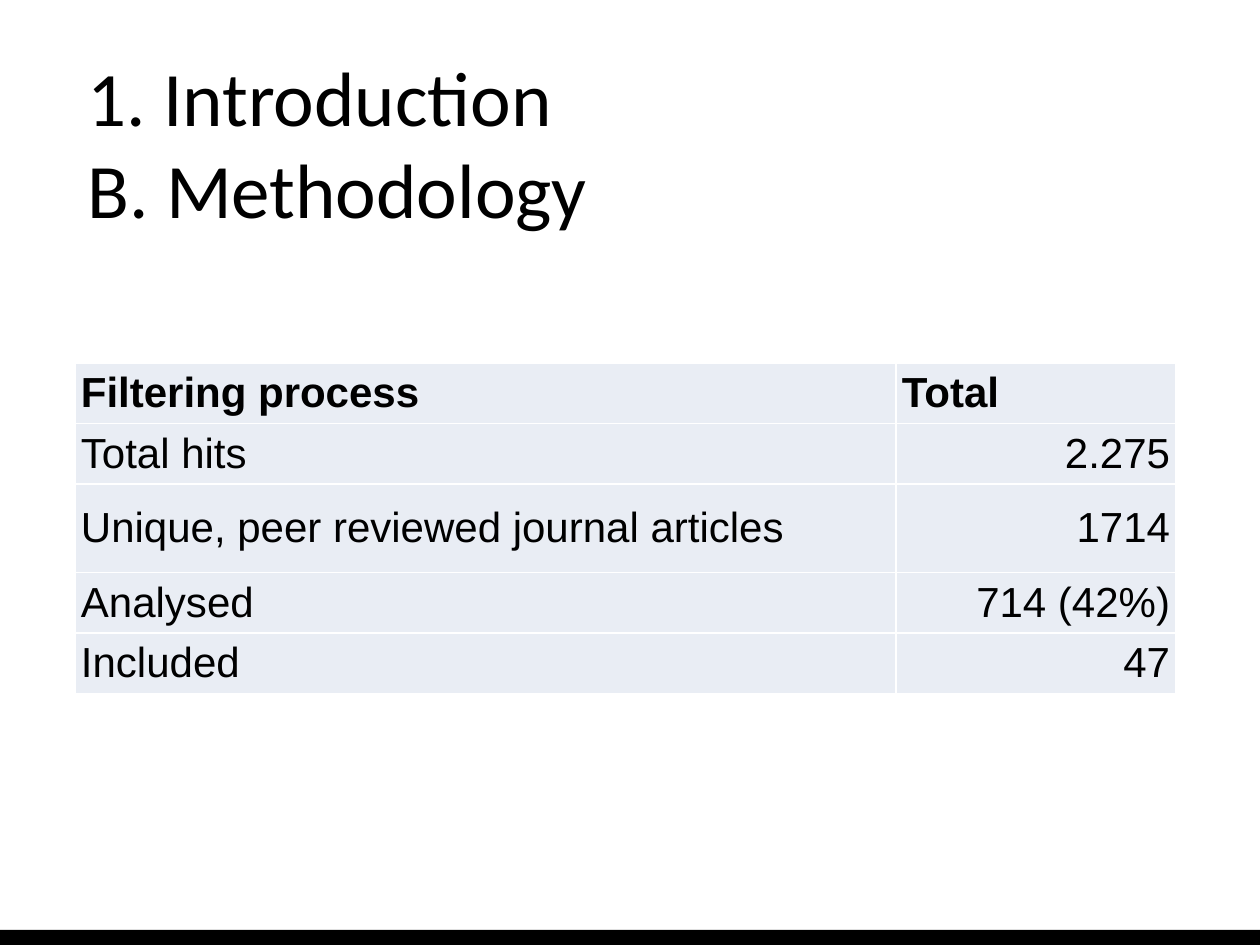
from lxml.etree import SubElement
from pptx import Presentation
from pptx.dml.color import RGBColor
from pptx.enum.shapes import MSO_SHAPE
from pptx.enum.text import MSO_ANCHOR, PP_ALIGN
from pptx.oxml.ns import qn
from pptx.util import Emu, Pt

PX_PER_INCH = 126
BLACK, WHITE, PALE_BLUE = "000000", "FFFFFF", "E9EDF4"
TITLE_LINES = ["1. Introduction", "B. Methodology"]
FILTER_ROWS = [
    ("Filtering process", "Total"),
    ("Total hits", "2.275"),
    ("Unique, peer reviewed journal articles", "1714"),
    ("Analysed", "714 (42%)"),
    ("Included", "47"),
]


def px(length):
    return Emu(round(length * 914400 / PX_PER_INCH))


def color(hex_string):
    return RGBColor.from_string(hex_string)


def format_text(paragraph, font_name, size, bold=False):
    for run in paragraph.runs:
        run.font.name = font_name
        run.font.size = Pt(size)
        run.font.bold = bold
        run.font.color.rgb = color(BLACK)


def add_footer_bar(slide, left, top, width, height):
    bar = slide.shapes.add_shape(
        MSO_SHAPE.RECTANGLE, px(left), px(top), px(width), px(height))
    bar.shadow.inherit = False
    bar.fill.solid()
    bar.fill.fore_color.rgb = color(BLACK)
    bar.line.fill.background()


def add_title(slide, left, top, width, height):
    box = slide.shapes.add_textbox(px(left), px(top), px(width), px(height))
    text_frame = box.text_frame
    text_frame.word_wrap = True
    text_frame.vertical_anchor = MSO_ANCHOR.MIDDLE
    paragraph = text_frame.paragraphs[0]
    paragraph.text = "\v".join(TITLE_LINES)
    format_text(paragraph, "Calibri", 44)


def add_borders(cell):
    properties = cell._tc.get_or_add_tcPr()
    for side in ("lnL", "lnR", "lnT", "lnB"):
        line = SubElement(properties, qn(f"a:{side}"), w=str(Pt(1)))
        fill = SubElement(line, qn("a:solidFill"))
        SubElement(fill, qn("a:srgbClr"), val=WHITE)


def format_cell(cell, text, is_header, is_number):
    cell.margin_left = cell.margin_right = px(6)
    cell.margin_top = cell.margin_bottom = px(5)
    cell.vertical_anchor = MSO_ANCHOR.MIDDLE
    add_borders(cell)
    cell.fill.solid()
    cell.fill.fore_color.rgb = color(PALE_BLUE)
    paragraph = cell.text_frame.paragraphs[0]
    paragraph.text = text
    paragraph.alignment = PP_ALIGN.RIGHT if is_number else PP_ALIGN.LEFT
    format_text(paragraph, "Arial", 24, bold=is_header)


def add_filter_table(slide, left, top, width, height):
    total_width, tall_row = 280, 89
    plain_row = (height - tall_row) // (len(FILTER_ROWS) - 1)
    table = slide.shapes.add_table(
        len(FILTER_ROWS), 2, px(left), px(top), px(width), px(height)).table
    table.columns[0].width = px(width - total_width)
    table.columns[1].width = px(total_width)
    for row_index, texts in enumerate(FILTER_ROWS):
        table.rows[row_index].height = px(tall_row if row_index == 2 else plain_row)
        for column_index, text in enumerate(texts):
            is_header = row_index == 0
            format_cell(table.cell(row_index, column_index), text, is_header,
                        is_number=column_index == 1 and not is_header)


def main():
    presentation = Presentation()
    presentation.slide_width, presentation.slide_height = px(1260), px(945)
    slide = presentation.slides.add_slide(presentation.slide_layouts[6])

    # Footer bar, title and table
    add_footer_bar(slide, 0, 930, 1260, 15)
    add_title(slide, 75, 50, 1128, 183)
    add_filter_table(slide, 75, 363, 1101, 325)

    presentation.save("out.pptx")


if __name__ == "__main__":
    main()
